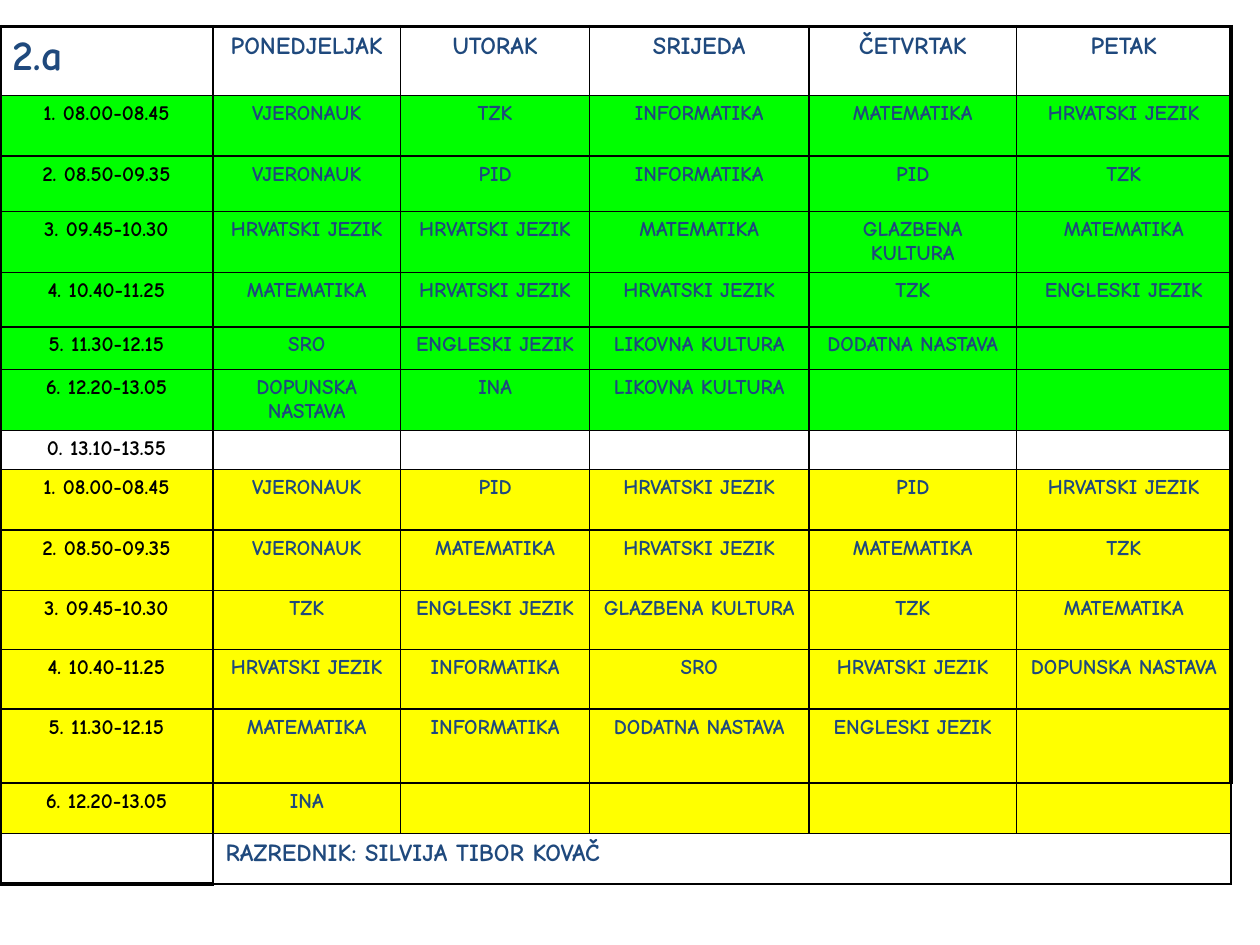
from lxml.etree import SubElement
from pptx import Presentation
from pptx.dml.color import RGBColor
from pptx.enum.text import PP_ALIGN as Align
from pptx.oxml import parse_xml
from pptx.oxml.ns import nsdecls, qn
from pptx.util import Inches, Pt

FONT = "Comic Neue"
BLUE, BLACK, GREEN, YELLOW = "1F497D", "000000", "00FF00", "FFFF00"
THIN, THICK = 1, 2.25

COLUMNS = [1.69, 1.49, 1.5, 1.74, 1.65, 1.7]
ROWS = [0.55, 0.48, 0.44, 0.42, 0.43, 0.34, 0.41, 0.31,
        0.48, 0.48, 0.47, 0.47, 0.59, 0.4, 0.4]

DAYS = ["PONEDJELJAK", "UTORAK", "SRIJEDA", "ČETVRTAK", "PETAK"]
PERIODS = ["1. 08.00-08.45", "2. 08.50-09.35", "3. 09.45-10.30",
           "4. 10.40-11.25", "5. 11.30-12.15", "6. 12.20-13.05"]
BREAK = "0. 13.10-13.55"
TEACHER = "RAZREDNIK: SILVIJA TIBOR KOVAČ"

GREEN_WEEK = [
    ["VJERONAUK", "TZK", "INFORMATIKA", "MATEMATIKA", "HRVATSKI JEZIK"],
    ["VJERONAUK", "PID", "INFORMATIKA", "PID", "TZK"],
    ["HRVATSKI JEZIK", "HRVATSKI JEZIK", "MATEMATIKA", "GLAZBENA KULTURA", "MATEMATIKA"],
    ["MATEMATIKA", "HRVATSKI JEZIK", "HRVATSKI JEZIK", "TZK", "ENGLESKI JEZIK"],
    ["SRO", "ENGLESKI JEZIK", "LIKOVNA KULTURA", "DODATNA NASTAVA", ""],
    ["DOPUNSKA NASTAVA", "INA", "LIKOVNA KULTURA", "", ""],
]
YELLOW_WEEK = [
    ["VJERONAUK", "PID", "HRVATSKI JEZIK", "PID", "HRVATSKI JEZIK"],
    ["VJERONAUK", "MATEMATIKA", "HRVATSKI JEZIK", "MATEMATIKA", "TZK"],
    ["TZK", "ENGLESKI JEZIK", "GLAZBENA KULTURA", "TZK", "MATEMATIKA"],
    ["HRVATSKI JEZIK", "INFORMATIKA", "SRO", "HRVATSKI JEZIK", "DOPUNSKA NASTAVA"],
    ["MATEMATIKA", "INFORMATIKA", "DODATNA NASTAVA", "ENGLESKI JEZIK", ""],
    ["INA", "", "", "", ""],
]


def rgb(value):
    return RGBColor.from_string(value)


def set_text(cell, text, size=12, color=BLUE, align=Align.CENTER):
    p = cell.text_frame.paragraphs[0]
    p.text = text
    p.alignment = align
    for r in p.runs:
        r.font.name, r.font.size, r.font.bold = FONT, Pt(size), True
        r.font.color.rgb = rgb(color)
    if not text:
        # The end mark keeps an empty cell from stretching its row
        SubElement(p._p, qn("a:endParaRPr"), sz=str(size * 100))


def set_fill(cell, color):
    if color:
        cell.fill.solid()
        cell.fill.fore_color.rgb = rgb(color)
    else:
        cell.fill.background()


def set_borders(cell, widths):
    """Draw the left, right, top and bottom borders, widths in points."""
    tc_pr = cell._tc.get_or_add_tcPr()
    for i, (side, width) in enumerate(zip("LRTB", widths)):
        tc_pr.insert(i, parse_xml(
            f'<a:ln{side} {nsdecls("a")} w="{Pt(width)}"><a:solidFill>'
            f'<a:srgbClr val="{BLACK}"/></a:solidFill></a:ln{side}>'))


def border_widths(row, col):
    last_row, last_col = len(ROWS) - 1, len(COLUMNS) - 1
    thick = (col == 0,
             col == last_col and row < last_row - 1,
             row == 0,
             row == last_row and col == 0)
    return [THICK if t else THIN for t in thick]


def add_grid(s):
    frame = s.shapes.add_table(len(ROWS), len(COLUMNS), 0, Inches(0.21),
                               Inches(sum(COLUMNS)), Inches(sum(ROWS)))
    table = frame.table
    table.first_row = table.horz_banding = False
    for column, width in zip(table.columns, COLUMNS):
        column.width = Inches(width)
    for row, height in zip(table.rows, ROWS):
        row.height = Inches(height)
    return table


def timetable_rows():
    """Return (fill, texts) for each row from top to bottom."""
    blank = [""] * len(DAYS)
    return [
        (None, ["2.a"] + DAYS),
        *[(GREEN, [time] + day) for time, day in zip(PERIODS, GREEN_WEEK)],
        (None, [BREAK] + blank),
        *[(YELLOW, [time] + day) for time, day in zip(PERIODS, YELLOW_WEEK)],
        (None, ["", TEACHER] + blank[1:]),
    ]


def text_style(row, col):
    if row == 0:
        return dict(size=14) if col else dict(size=24, align=Align.LEFT)
    if row == len(ROWS) - 1:
        return dict(size=14, align=Align.LEFT)
    return dict(color=BLUE if col else BLACK)


def main():
    prs = Presentation()
    prs.slide_width, prs.slide_height = Inches(10), Inches(7.5)
    s = prs.slides.add_slide(prs.slide_layouts[6])
    table = add_grid(s)
    for row, (fill, texts) in enumerate(timetable_rows()):
        for col, text in enumerate(texts):
            cell = table.cell(row, col)
            set_text(cell, text, **text_style(row, col))
            set_fill(cell, fill)
            set_borders(cell, border_widths(row, col))
    last = len(ROWS) - 1
    table.cell(last, 1).merge(table.cell(last, len(COLUMNS) - 1))
    prs.save("out.pptx")


if __name__ == "__main__":
    main()
